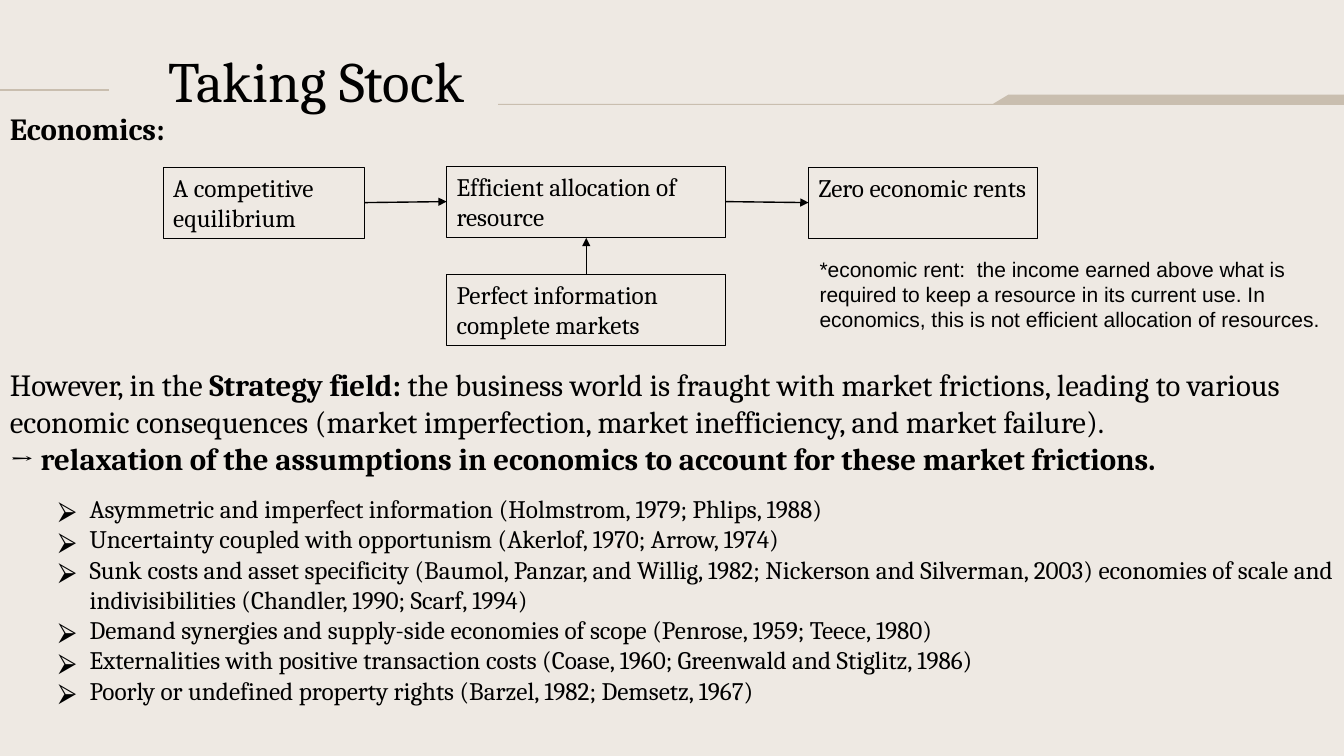
from pptx import Presentation
from pptx.dml.color import RGBColor
from pptx.enum.shapes import MSO_CONNECTOR as CONN, MSO_SHAPE as SHAPE
from pptx.enum.text import MSO_ANCHOR as ANCHOR, MSO_AUTO_SIZE as AUTO, PP_ALIGN as ALIGN
from pptx.oxml.ns import qn
from pptx.util import Inches, Pt
from lxml.etree import SubElement

W, H = 13.33, 7.5
COLORS = {"paper": "EEE9E3", "rule": "C9BEAF", "ink": "000000"}
SERIF, SANS, SYMBOLS = "Cambria", "Arial", "Noto Sans Symbols"
BOX_H = 0.71
BULLETS = [
    "Asymmetric and imperfect information (Holmstrom, 1979; Phlips, 1988)",
    "Uncertainty coupled with opportunism (Akerlof, 1970; Arrow, 1974)",
    "Sunk costs and asset specificity (Baumol, Panzar, and Willig, 1982; Nickerson and "
    "Silverman, 2003) economies of scale and indivisibilities (Chandler, 1990; Scarf, 1994)",
    "Demand synergies and supply-side economies of scope (Penrose, 1959; Teece, 1980)",
    "Externalities with positive transaction costs (Coase, 1960; Greenwald and Stiglitz, 1986)",
    "Poorly or undefined property rights (Barzel, 1982; Demsetz, 1967)",
]


def rgb(name):
    return RGBColor.from_string(COLORS[name])


def add_run(p, text, size, name=SERIF, bold=False):
    r = p.add_run()
    r.text = text
    for key, value in {"size": Pt(size), "name": name, "bold": bold}.items():
        setattr(r.font, key, value)
    r.font.color.rgb = rgb("ink")


def set_frame(s, inset=0.05):
    tf = s.text_frame
    values = {"word_wrap": True, "auto_size": AUTO.NONE, "vertical_anchor": ANCHOR.TOP,
              "margin_left": Inches(0.1), "margin_right": Inches(0.1),
              "margin_top": Inches(inset), "margin_bottom": Inches(inset)}
    for key, value in values.items():
        setattr(tf, key, value)
    return tf


def add_text_box(slide, box, inset=0.05):
    return set_frame(slide.shapes.add_textbox(*map(Inches, box)), inset)


def add_line(slide, start, end, color="ink", width=1, arrow=False):
    s = slide.shapes.add_connector(CONN.STRAIGHT, *map(Inches, (*start, *end)))
    s.line.color.rgb = rgb(color)
    s.line.width = Pt(width)
    if arrow:
        SubElement(s.line._get_or_add_ln(), qn("a:tailEnd"), type="triangle")
    SubElement(s._element.spPr, qn("a:effectLst"))


def add_title(slide, box):
    left, top, width, height = box
    add_line(slide, (0, 0.89), (left, 0.89), "rule", 1.5)
    corners = [(W, 0.94), (10, 0.94), (9.85, 1.03), (4.94, 1.03), (4.94, 1.04), (W, 1.04)]
    points = [(Inches(x), Inches(y)) for x, y in corners]
    band = slide.shapes.build_freeform(*points[0])
    band.add_line_segments(points[1:], close=True)
    s = band.convert_to_shape()
    s.shadow.inherit = False
    s.fill.solid()
    s.fill.fore_color.rgb = rgb("rule")
    s.line.fill.background()

    title = slide.shapes.title
    title.left, title.top, title.width, title.height = map(Inches, box)
    p = set_frame(title).paragraphs[0]
    p.alignment = ALIGN.CENTER
    p.line_spacing = 0.8
    add_run(p, "Taking Stock", 40.7)


def add_flow_box(slide, left, top, width, text):
    s = slide.shapes.add_shape(SHAPE.RECTANGLE, *map(Inches, (left, top, width, BOX_H)))
    s.shadow.inherit = False
    s.fill.background()
    s.line.color.rgb = rgb("ink")
    s.line.width = Pt(0.75)
    p = set_frame(s).paragraphs[0]
    p.alignment = ALIGN.LEFT
    add_run(p, text, 18)


def add_flow(slide, left, top):
    """Three boxes in a row, with a fourth one feeding the middle box from below."""
    mid_x, mid_w = left + 2.81, 2.77
    end_x, mid_y, low_y = left + 6.4, top - 0.01, top + 1.06
    add_flow_box(slide, left, top, 2, "A competitive equilibrium")
    add_flow_box(slide, mid_x, mid_y, mid_w, "Efficient allocation of resource")
    add_flow_box(slide, end_x, top, 2.27, "Zero economic rents")
    add_flow_box(slide, mid_x, low_y, mid_w, "Perfect information complete markets")

    side_y, center_y, center_x = top + 0.35, mid_y + 0.35, mid_x + mid_w / 2
    add_line(slide, (left + 2, side_y), (mid_x, center_y), arrow=True)
    add_line(slide, (mid_x + mid_w, center_y), (end_x, side_y), arrow=True)
    add_line(slide, (center_x, low_y), (center_x, mid_y + BOX_H), width=0.75, arrow=True)


def add_bullet(p, text):
    pPr = p._p.get_or_add_pPr()
    pPr.set("marL", str(Inches(0.79)))
    pPr.set("indent", str(Inches(-0.31)))
    color = SubElement(pPr, qn("a:buClr"))
    SubElement(color, qn("a:srgbClr"), val=COLORS["ink"])
    SubElement(pPr, qn("a:buFont"), typeface=SYMBOLS)
    SubElement(pPr, qn("a:buChar"), char="⮚")
    add_run(p, text, 18)


def add_strategy(slide, box):
    tf = add_text_box(slide, box)
    p = tf.paragraphs[0]
    add_run(p, "However, in the", 22)
    add_run(p, " Strategy field: ", 22, bold=True)
    add_run(p, "the business world is fraught with market frictions, leading to various economic "
               "consequences (market imperfection, market inefficiency, and market failure). ", 22)
    p.add_line_break()
    add_run(p, "→", 22)
    add_run(p, " relaxation of the assumptions in economics to account for these "
               "market frictions.", 22, bold=True)
    for i, text in enumerate(BULLETS):
        p = tf.add_paragraph()
        p.space_before = Pt(0 if i else 12)
        add_bullet(p, text)


def add_note(slide, box, text, **style):
    add_run(add_text_box(slide, box, inset=0.1).paragraphs[0], text, **style)


def main():
    prs = Presentation()
    prs.slide_width, prs.slide_height = Inches(W), Inches(H)
    slide = prs.slides.add_slide(prs.slide_layouts[5])
    slide.background.fill.solid()
    slide.background.fill.fore_color.rgb = rgb("paper")

    add_title(slide, (1.08, 0.53, 4.12, 0.7))
    add_flow(slide, 1.62, 1.66)
    add_strategy(slide, (0, 3.58, W, 3.6))
    add_note(slide, (8.03, 2.44, 5.3, 0.53),
             "*economic rent:  the income earned above what is required to keep a resource in its "
             "current use. In economics, this is not efficient allocation of resources.",
             size=15, name=SANS)
    add_note(slide, (0, 0.99, 3.28, 0.57), "Economics:", size=22, bold=True)
    prs.save("out.pptx")


if __name__ == "__main__":
    main()
